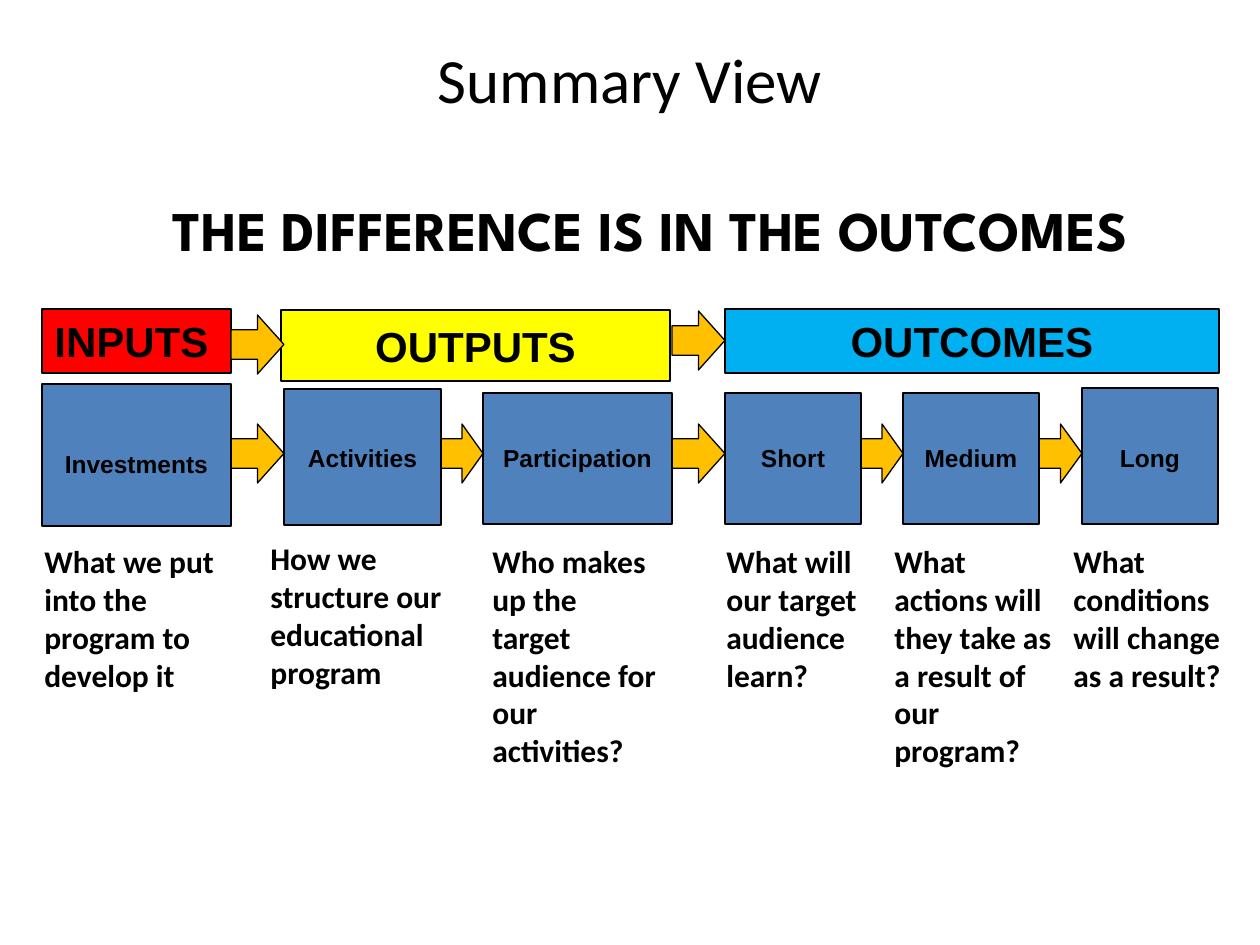
from dataclasses import dataclass
from itertools import pairwise

from pptx import Presentation
from pptx.dml.color import RGBColor as Rgb
from pptx.enum.shapes import MSO_SHAPE as Kind
from pptx.enum.text import MSO_ANCHOR as Anchor, MSO_AUTO_SIZE as Fit, PP_ALIGN as Align
from pptx.util import Emu, Pt

SCALE = 914400 / 126  # EMU in one px


@dataclass(frozen=True)
class Theme:
    ink: str = "000000"
    red: str = "FF0000"
    yellow: str = "FFFF00"
    cyan: str = "00B0F0"
    blue: str = "4F81BD"
    gold: str = "FFC000"
    sans: str = "Arial"
    body: str = "Calibri"
    show: str = "League Spartan"
    title: int = 36
    lead: int = 32
    head: int = 24
    note: int = 18
    label: int = 14


@dataclass(frozen=True)
class Box:
    x: int
    y: int
    w: int
    h: int

    @property
    def right(self) -> int:
        return self.x + self.w

    def emu(self) -> list[Emu]:
        return [px(n) for n in (self.x, self.y, self.w, self.h)]


@dataclass(frozen=True)
class Band:
    text: str
    box: Box
    fill: str
    align: Align = Align.CENTER


@dataclass(frozen=True)
class Stage:
    label: str
    box: Box
    note: str
    area: Box
    mid: int = 457  # centre line of the label


def px(n: int) -> Emu:
    return Emu(round(n * SCALE))


def write(frame, text: str, *, size: int, font: str, bold: bool = True,
          align: Align = Align.LEFT, anchor: Anchor = Anchor.TOP) -> None:
    frame.word_wrap = True
    frame.auto_size = Fit.NONE
    frame.vertical_anchor = anchor
    para = frame.paragraphs[0]
    para.alignment = align
    run = para.add_run()
    run.text = text
    run.font.size = Pt(size)
    run.font.name = font
    run.font.bold = bold
    run.font.color.rgb = Rgb.from_string(THEME.ink)


def shape(slide, kind: Kind, box: Box, fill: str, line: float = 1):
    item = slide.shapes.add_shape(kind, *box.emu())
    item.shadow.inherit = False
    item.fill.solid()
    item.fill.fore_color.rgb = Rgb.from_string(fill)
    item.line.color.rgb = Rgb.from_string(THEME.ink)
    item.line.width = Pt(line)
    return item


def arrow(slide, x: int, y: int, w: int) -> None:
    shape(slide, Kind.RIGHT_ARROW, Box(x, y, w, 59), THEME.gold, 0.75)


def draw_band(slide, band: Band) -> None:
    item = shape(slide, Kind.RECTANGLE, band.box, band.fill)
    write(item.text_frame, band.text, size=THEME.head, font=THEME.sans,
          align=band.align, anchor=Anchor.MIDDLE)


def draw_stage(slide, stage: Stage) -> None:
    frame = shape(slide, Kind.RECTANGLE, stage.box, THEME.blue).text_frame
    half = 14  # half the height of a label line
    frame.margin_top = px(stage.mid - half - stage.box.y)
    write(frame, stage.label, size=THEME.label, font=THEME.sans, align=Align.CENTER)
    note = slide.shapes.add_textbox(*stage.area.emu())
    write(note.text_frame, stage.note, size=THEME.note, font=THEME.body)


THEME = Theme()

BANDS = [
    Band("INPUTS", Box(42, 309, 189, 64), THEME.red, Align.LEFT),
    Band("OUTPUTS", Box(281, 310, 389, 71), THEME.yellow),
    Band("OUTCOMES", Box(725, 309, 494, 64), THEME.cyan),
]

STAGES = [
    Stage("Investments", Box(42, 384, 189, 142),
          "What we put into the program to develop it", Box(32, 536, 199, 165), 463),
    Stage("Activities", Box(284, 389, 157, 136),
          "How we structure our educational program", Box(258, 533, 210, 204)),
    Stage("Participation", Box(483, 393, 189, 131),
          "Who makes up the target audience for our activities?", Box(480, 536, 189, 242)),
    Stage("Short", Box(725, 393, 136, 131),
          "What will our target audience learn?", Box(714, 536, 189, 165)),
    Stage("Medium", Box(903, 393, 136, 131),
          "What actions will they take as a result of our program?", Box(882, 536, 189, 242)),
    Stage("Long", Box(1082, 388, 136, 136),
          "What conditions will change as a result?", Box(1061, 536, 189, 165)),
]


def main() -> None:
    deck = Presentation()
    deck.slide_width, deck.slide_height = px(1260), px(945)
    slide = deck.slides.add_slide(deck.slide_layouts[5])

    # Title and headline
    title = slide.shapes.title
    title.left, title.top, title.width, title.height = Box(63, -32, 1134, 221).emu()
    write(title.text_frame, "Summary View", size=THEME.title, font=THEME.body,
          bold=False, align=Align.CENTER, anchor=Anchor.MIDDLE)
    lead = slide.shapes.add_textbox(*Box(84, 189, 1134, 81).emu())
    write(lead.text_frame, "THE DIFFERENCE IS IN THE OUTCOMES", size=THEME.lead,
          font=THEME.show, align=Align.CENTER)

    # Top row: bands and the arrows between them
    for band in BANDS:
        draw_band(slide, band)
    for x, y in ((231, 315), (672, 311)):
        arrow(slide, x, y, 53)

    # Lower row: each arrow fills the gap between two stages
    for left, right in pairwise(STAGES):
        arrow(slide, left.box.right, 424, right.box.x - left.box.right)
    for stage in STAGES:
        draw_stage(slide, stage)

    deck.save("out.pptx")


if __name__ == "__main__":
    main()
